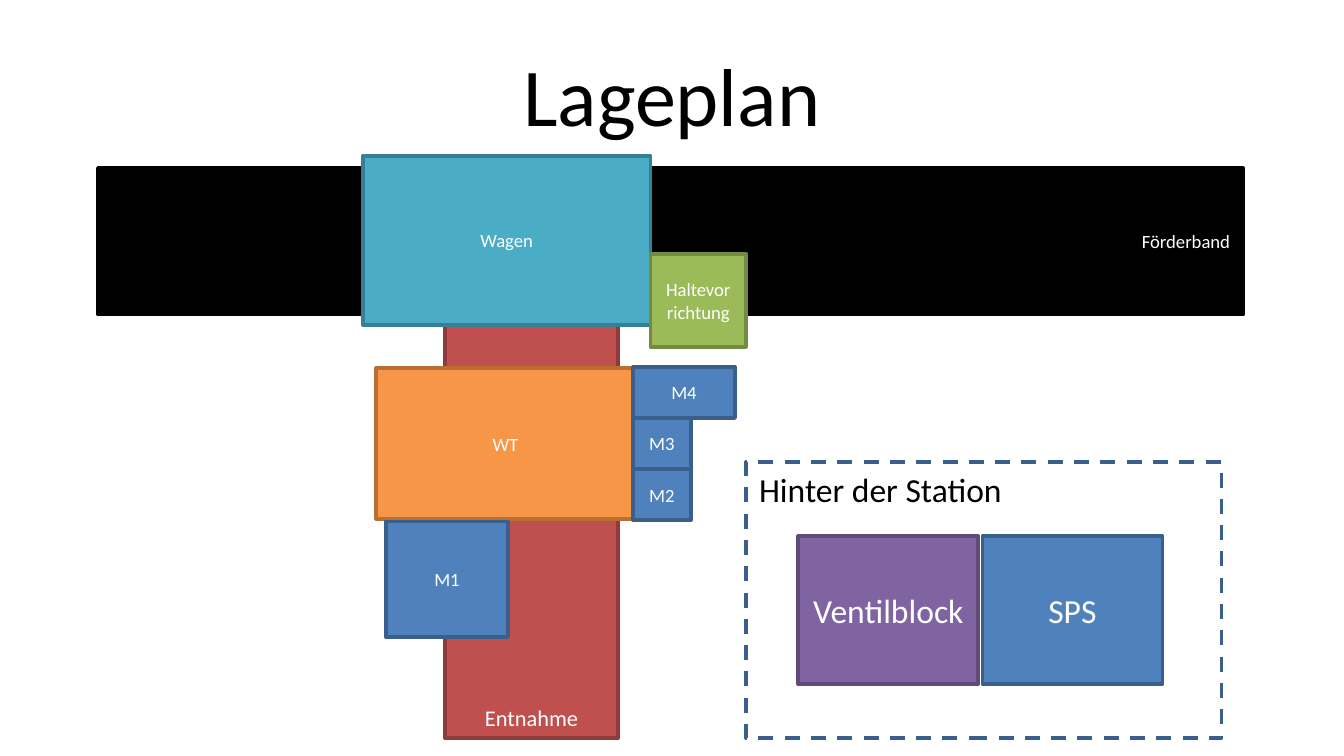
from pptx import Presentation
from pptx.dml.color import RGBColor
from pptx.enum.dml import MSO_LINE
from pptx.enum.shapes import MSO_SHAPE
from pptx.enum.text import MSO_ANCHOR, PP_ALIGN
from pptx.util import Inches, Pt

RECT = MSO_SHAPE.RECTANGLE
DASH = MSO_LINE.DASH
TOP, MIDDLE, BOTTOM = MSO_ANCHOR.TOP, MSO_ANCHOR.MIDDLE, MSO_ANCHOR.BOTTOM
LEFT, CENTER, RIGHT = PP_ALIGN.LEFT, PP_ALIGN.CENTER, PP_ALIGN.RIGHT

THEME = {
    "font": "Calibri",
    "title": 44, "large": 18, "medium": 12, "small": 10,
    "line": 2,
    "dark": "000000", "light": "FFFFFF",
    "blue": ("4F81BD", "3A5F8C"),
    "red": ("C0504D", "8E3B39"),
    "black": ("000000", "000000"),
    "orange": ("F79646", "B76F34"),
    "teal": ("4BACC6", "377F92"),
    "green": ("9BBB59", "738A42"),
    "purple": ("8064A2", "5F4A78"),
    "frame": (None, "3A5F8C"),
}

SLIDE_WIDTH = 10
SLIDE_HEIGHT = SLIDE_WIDTH * 9 / 16

TITLE = ("Lageplan", (0.5, 0.23, 9, 0.94))

BACKGROUND = [
    ("Hinter der Station", (5.55, 3.44, 3.54, 2.05), "frame", "large", LEFT, TOP),
    ("Entnahme", (3.31, 2.1, 1.29, 3.39), "red", "medium", CENTER, BOTTOM),
    ("Förderband", (0.73, 1.25, 8.52, 1.09), "black", "small", RIGHT, MIDDLE),
]

STATION = [
    ("WT", (2.8, 2.74, 1.92, 1.12), "orange"),
    ("M1", (2.87, 3.88, 0.91, 0.86), "blue"),
]
MOTORS = [("M2", 0.43), ("M3", 0.43), ("M4", 0.76)]
MOTOR_LEFT, MOTOR_BOTTOM, MOTOR_HEIGHT = 4.71, 3.87, 0.38

FOREGROUND = [
    ("Wagen", (2.7, 1.16, 2.14, 1.26), "teal", "small"),
    ("Haltevorrichtung", (4.84, 1.89, 0.71, 0.69), "green", "small"),
]
CABINET = [("Ventilblock", "purple"), ("SPS", "blue")]
CABINET_LEFT, CABINET_TOP, CABINET_STEP = 5.94, 3.99, 1.37
CABINET_SIZE = (1.34, 1.1)


def write(sp, text, size, color, align=CENTER, anchor=MIDDLE):
    tf = sp.text_frame
    tf.word_wrap = True
    tf.vertical_anchor = anchor
    p = tf.paragraphs[0]
    p.text = text
    p.alignment = align
    p.font.name = THEME["font"]
    p.font.size = Pt(THEME[size])
    p.font.color.rgb = RGBColor.from_string(THEME[color])


def add_box(shapes, text, box, style, size="small", align=CENTER, anchor=MIDDLE):
    fill, line = THEME[style]
    sp = shapes.add_shape(RECT, *map(Inches, box))
    sp.shadow.inherit = False
    sp.line.color.rgb = RGBColor.from_string(line)
    sp.line.width = Pt(THEME["line"])
    if fill:
        sp.fill.solid()
        sp.fill.fore_color.rgb = RGBColor.from_string(fill)
    else:
        sp.fill.background()
        sp.line.dash_style = DASH
    write(sp, text, size, "light" if fill else "dark", align, anchor)


def main():
    prs = Presentation()
    prs.slide_width, prs.slide_height = Inches(SLIDE_WIDTH), Inches(SLIDE_HEIGHT)
    s = prs.slides.add_slide(prs.slide_layouts[6])

    for item in BACKGROUND:
        add_box(s.shapes, *item)

    station = s.shapes.add_group_shape()
    for item in STATION:
        add_box(station.shapes, *item)
    for i, (name, width) in enumerate(MOTORS, start=1):
        top = MOTOR_BOTTOM - i * MOTOR_HEIGHT
        add_box(station.shapes, name, (MOTOR_LEFT, top, width, MOTOR_HEIGHT), "blue")

    text, box = TITLE
    write(s.shapes.add_textbox(*map(Inches, box)), text, "title", "dark")

    for item in FOREGROUND:
        add_box(s.shapes, *item)
    for i, (name, style) in enumerate(CABINET):
        left = CABINET_LEFT + i * CABINET_STEP
        add_box(s.shapes, name, (left, CABINET_TOP, *CABINET_SIZE), style, "large")

    prs.save("out.pptx")


if __name__ == "__main__":
    main()
